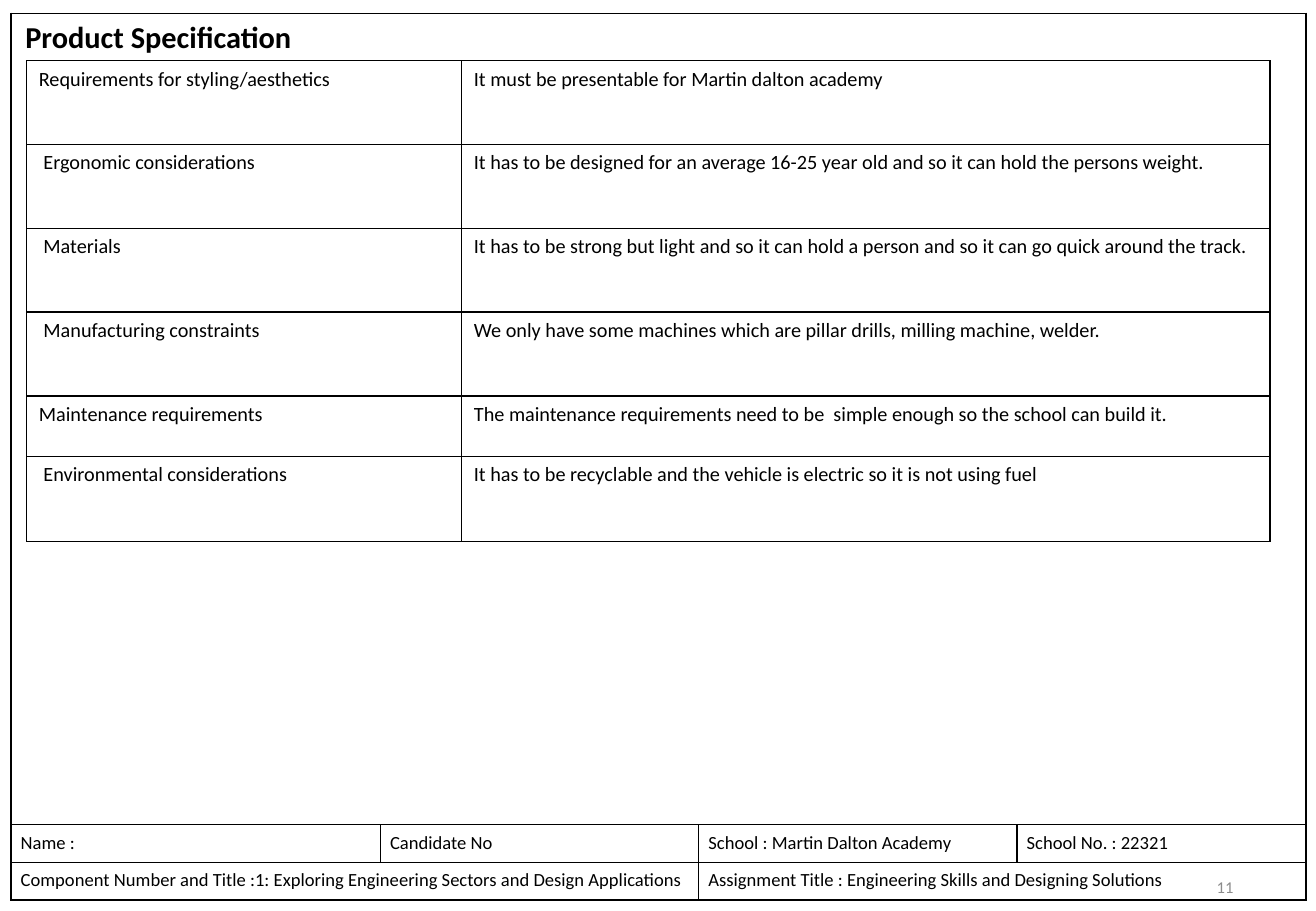
from dataclasses import dataclass

from lxml.etree import SubElement
from pptx import Presentation
from pptx.dml.color import RGBColor
from pptx.enum.text import MSO_ANCHOR as Anchor, PP_ALIGN as Align
from pptx.oxml.ns import qn
from pptx.util import Inches, Pt


@dataclass(frozen=True)
class Theme:
    font: str = "Calibri"
    ink: str = "000000"
    paper: str = "FFFFFF"
    muted: str = "8C8C8C"
    title: float = 18
    body: float = 12
    footer: float = 11
    number: float = 9.8
    line: float = 1


THEME = Theme()

SPECS = [
    ("Requirements for styling/aesthetics",
     "It must be presentable for Martin dalton academy", 0.69),
    (" Ergonomic considerations",
     "It has to be designed for an average 16-25 year old and so it can hold the persons weight.", 0.69),
    (" Materials",
     "It has to be strong but light and so it can hold a person and so it can go quick around the track.", 0.69),
    (" Manufacturing constraints",
     "We only have some machines which are pillar drills, milling machine, welder.", 0.69),
    ("Maintenance requirements",
     "The maintenance requirements need to be  simple enough so the school can build it.", 0.5),
    (" Environmental considerations",
     "It has to be recyclable and the vehicle is electric so it is not using fuel", 0.7),
]

FRAME = [
    ["", "", "", ""],
    ["Name :", "Candidate No", "School : Martin Dalton Academy", "School No. : 22321"],
    ["Component Number and Title :1: Exploring Engineering Sectors and Design Applications", "",
     "Assignment Title : Engineering Skills and Designing Solutions", ""],
]


def style(frame, size, color=THEME.ink, bold=False, align=Align.LEFT):
    for para in frame.paragraphs:
        para.alignment = align
        para.font.size = Pt(size)
        for run in para.runs:
            font = run.font
            font.name, font.size, font.bold = THEME.font, Pt(size), bold
            font.color.rgb = RGBColor.from_string(color)


def add_border(cell):
    props = cell._tc.get_or_add_tcPr()
    for side in ("a:lnL", "a:lnR", "a:lnT", "a:lnB"):
        line = SubElement(props, qn(side), w=str(Pt(THEME.line)))
        fill = SubElement(line, qn("a:solidFill"))
        SubElement(fill, qn("a:srgbClr"), val=THEME.ink)


def add_grid(slide, left, top, widths, heights, texts, size, inset):
    """Add a white table with thin borders on every cell."""
    shape = slide.shapes.add_table(
        len(heights), len(widths), Inches(left), Inches(top),
        Inches(sum(widths)), Inches(sum(heights)))
    table = shape.table
    table.first_row = table.horz_banding = False
    for col, width in zip(table.columns, widths):
        col.width = Inches(width)
    for row, height, line in zip(table.rows, heights, texts):
        row.height = Inches(height)
        for cell, text in zip(row.cells, line):
            cell.text_frame.text = text
            cell.margin_left = cell.margin_right = Inches(inset)
            cell.margin_top = cell.margin_bottom = Inches(0.05)
            style(cell.text_frame, size)
            add_border(cell)
            cell.fill.solid()
            cell.fill.fore_color.rgb = RGBColor.from_string(THEME.paper)
    return table


def add_frame(slide):
    """Add the page border with its footer rows."""
    table = add_grid(slide, 0.09, 0.11, [3.04, 2.62, 2.62, 2.38],
                     [6.68, 0.31, 0.31], FRAME, THEME.footer, 0.08)
    for row, first, last in [(0, 0, 3), (2, 0, 1), (2, 2, 3)]:
        table.cell(row, first).merge(table.cell(row, last))
    for cell in table.rows[1].cells:
        cell.vertical_anchor = Anchor.MIDDLE


def add_label(slide, text, left, top, width, height, anchor=Anchor.TOP, **look):
    box = slide.shapes.add_textbox(
        Inches(left), Inches(top), Inches(width), Inches(height))
    frame = box.text_frame
    frame.word_wrap = True
    frame.vertical_anchor = anchor
    frame.text = text
    style(frame, **look)


def main():
    deck = Presentation()
    deck.slide_width, deck.slide_height = Inches(10.83), Inches(7.5)
    slide = deck.slides.add_slide(deck.slide_layouts[6])

    add_frame(slide)
    add_label(slide, "11", 7.81, 7.1, 2.44, 0.4, Anchor.MIDDLE,
              size=THEME.number, color=THEME.muted, align=Align.RIGHT)
    add_label(slide, "Product Specification", 0.11, 0.1, 2.49, 0.4,
              size=THEME.title, bold=True)
    add_grid(slide, 0.22, 0.5, [3.58, 6.65], [spec[2] for spec in SPECS],
             [spec[:2] for spec in SPECS], THEME.body, 0.1)
    deck.save("out.pptx")


if __name__ == "__main__":
    main()
